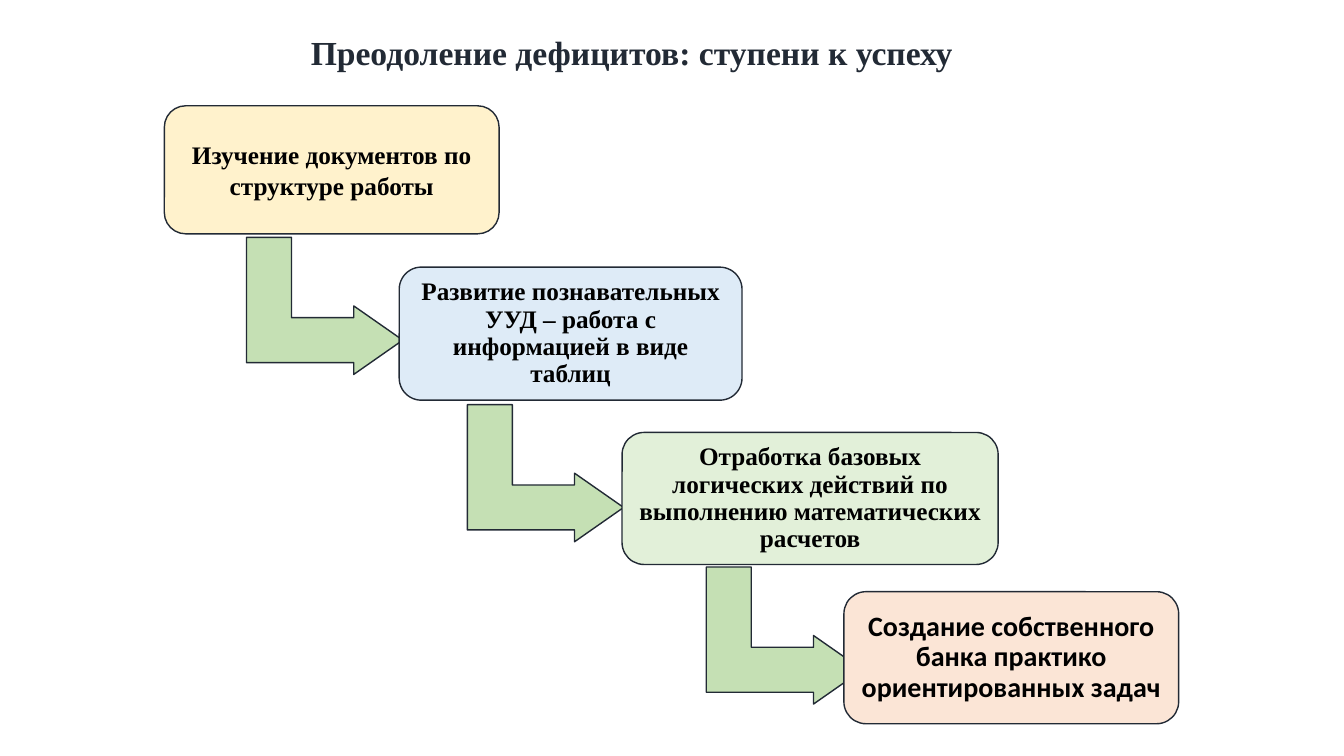
"""Build a slide with four steps descending to success, joined by bent arrows."""
from dataclasses import dataclass

from pptx import Presentation
from pptx.dml.color import RGBColor
from pptx.enum.shapes import MSO_SHAPE as Shape
from pptx.enum.text import MSO_ANCHOR as Anchor, MSO_AUTO_SIZE as AutoSize, PP_ALIGN as Align
from pptx.shapes.autoshape import Shape as AutoShape
from pptx.slide import Slide
from pptx.util import Inches, Pt

INK = RGBColor(0x22, 0x2A, 0x35)
BLACK = RGBColor(0x00, 0x00, 0x00)
ARROW_GREEN = RGBColor(0xC5, 0xE0, 0xB4)
CREAM = RGBColor(0xFF, 0xF2, 0xCC)
PALE_BLUE = RGBColor(0xDE, 0xEB, 0xF7)
PALE_GREEN = RGBColor(0xE2, 0xF0, 0xD9)
PEACH = RGBColor(0xFB, 0xE5, 0xD6)
SERIF = "Times New Roman"
ARROW_WIDTH, ARROW_HEIGHT = 1.36, 1.55
ARROW_BENDS = (0.328, 0.25, 0.358)


@dataclass(frozen=True)
class Step:
    text: str
    left: float
    top: float
    width: float
    height: float
    fill: RGBColor
    inset: float = 0.07
    font: str = SERIF
    size: int = 18
    spacing: float = 0.9


@dataclass(frozen=True)
class Turn:
    left: float
    top: float


STEPS = (
    Step("Изучение документов по структуре работы",
         1.63, 1.05, 3.32, 1.27, CREAM, spacing=1.0),
    Step("Развитие познавательных УУД – работа с информацией в виде таблиц",
         3.96, 2.65, 3.4, 1.32, PALE_BLUE),
    Step("Отработка базовых логических действий по выполнению математических расчетов",
         6.17, 4.29, 3.73, 1.31, PALE_GREEN, inset=0.05),
    Step("Создание собственного банка практико ориентированных задач",
         8.37, 5.87, 3.32, 1.31, PEACH, inset=0.08, font="Calibri", size=20),
)
TURNS = (Turn(2.54, 2.26), Turn(4.73, 3.92), Turn(7.1, 5.53))


def write(shape: AutoShape, text: str, *, font: str = SERIF, size: int = 18,
          color: RGBColor = BLACK, spacing: float = 1.0, inset: float = 0.07,
          wrap: bool = True, anchor: Anchor = Anchor.MIDDLE) -> None:
    """Put bold centred text into a shape."""
    frame = shape.text_frame
    frame.text = text
    frame.word_wrap = wrap
    frame.vertical_anchor = anchor
    frame.margin_left = frame.margin_right = Inches(inset)
    frame.margin_top = frame.margin_bottom = Inches(inset)
    paragraph = frame.paragraphs[0]
    paragraph.alignment = Align.CENTER
    paragraph.line_spacing = spacing
    run_font = paragraph.runs[0].font
    run_font.name, run_font.size, run_font.bold = font, Pt(size), True
    run_font.color.rgb = color


def draw_outlined(slide: Slide, kind: Shape, left: float, top: float, width: float,
                  height: float, fill: RGBColor) -> AutoShape:
    """Draw a filled shape with a thin dark outline."""
    shape = slide.shapes.add_shape(kind, Inches(left), Inches(top), Inches(width), Inches(height))
    shape.shadow.inherit = False
    shape.fill.solid()
    shape.fill.fore_color.rgb = fill
    shape.line.color.rgb = INK
    shape.line.width = Pt(1)
    return shape


def draw_step(slide: Slide, step: Step) -> None:
    """Draw one rounded step with its text."""
    box = draw_outlined(slide, Shape.ROUNDED_RECTANGLE, step.left, step.top,
                        step.width, step.height, step.fill)
    write(box, step.text, font=step.font, size=step.size,
          spacing=step.spacing, inset=step.inset)


def draw_turn(slide: Slide, turn: Turn) -> None:
    """Draw one arrow that goes down and then right."""
    arrow = draw_outlined(slide, Shape.BENT_UP_ARROW, turn.left, turn.top,
                          ARROW_WIDTH, ARROW_HEIGHT, ARROW_GREEN)
    arrow.rotation = 90
    for index, bend in enumerate(ARROW_BENDS):
        arrow.adjustments[index] = bend


def draw_title(slide: Slide) -> None:
    """Place and format the slide title."""
    title = slide.shapes.title
    title.left, title.top = Inches(2.92), Inches(0.27)
    title.width, title.height = Inches(6.69), Inches(0.5)
    write(title, "Преодоление дефицитов: ступени к успеху", size=24, color=INK,
          inset=0.05, wrap=False, anchor=Anchor.TOP)
    title.text_frame.auto_size = AutoSize.SHAPE_TO_FIT_TEXT


def main() -> None:
    """Build and save the slide."""
    deck = Presentation()
    deck.slide_width, deck.slide_height = Inches(13.33), Inches(7.5)
    slide = deck.slides.add_slide(deck.slide_layouts.get_by_name("Title Only"))
    draw_title(slide)
    for turn in TURNS:
        draw_turn(slide, turn)
    for step in STEPS:
        draw_step(slide, step)
    deck.save("out.pptx")


if __name__ == "__main__":
    main()
